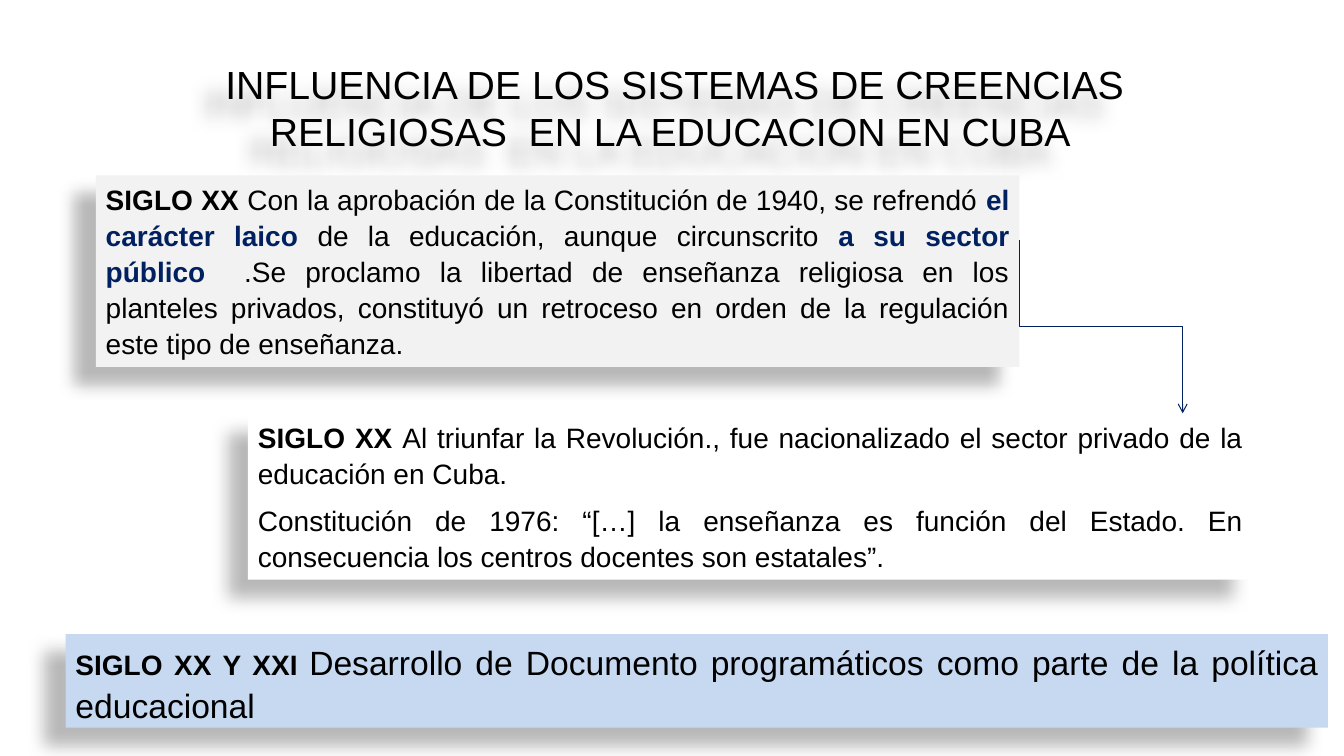
"""Build a slide on religious belief systems and education in Cuba."""
from dataclasses import dataclass

from lxml.etree import SubElement
from pptx import Presentation
from pptx.dml.color import RGBColor as Color
from pptx.enum.shapes import MSO_CONNECTOR as Connector, MSO_SHAPE as Preset
from pptx.enum.text import MSO_ANCHOR as Anchor, MSO_AUTO_SIZE as AutoSize, PP_ALIGN as Align
from pptx.oxml.ns import qn
from pptx.util import Inches, Pt


@dataclass(frozen=True)
class Theme:
    font: str = "Arial"
    ink: Color = Color.from_string("000000")
    accent: Color = Color.from_string("002060")
    grey: Color = Color.from_string("F2F2F2")
    white: Color = Color.from_string("FFFFFF")
    blue: Color = Color.from_string("C6D9F1")
    title_size: Pt = Pt(28)
    large_size: Pt = Pt(24)
    body_size: Pt = Pt(20)


theme = Theme()
presentation = Presentation()
presentation.slide_width, presentation.slide_height = Inches(13.33), Inches(7.5)
column, row = presentation.slide_width / 100, presentation.slide_height / 100
slide = presentation.slides.add_slide(presentation.slide_layouts[5])


def cast_shadow(shape):
    shape.shadow.inherit = False
    effects = shape._element.spPr.find(qn("a:effectLst"))
    shadow = SubElement(effects, qn("a:outerShdw"), blurRad=str(Pt(11.8)), dist=str(Pt(19.7)),
                        dir=str(141 * 60000), algn="ctr", rotWithShape="0")
    color = SubElement(shadow, qn("a:srgbClr"), val=str(theme.ink))
    SubElement(color, qn("a:alpha"), val="28000")


def prepare_frame(shape):
    frame = shape.text_frame
    frame.word_wrap = True
    frame.auto_size = AutoSize.SHAPE_TO_FIT_TEXT
    frame.vertical_anchor = Anchor.TOP
    return frame


title = slide.shapes.title
title.left, title.top = int(7.13 * column), int(7.33 * row)
title.width, title.height = int(86.12 * column), int(13.87 * row)
title_frame = prepare_frame(title)
title_frame.text = "INFLUENCIA DE LOS SISTEMAS DE CREENCIAS RELIGIOSAS  EN LA EDUCACION EN CUBA "
heading = title_frame.paragraphs[0]
heading.alignment = Align.CENTER
heading.font.name, heading.font.size = theme.font, theme.title_size
heading.font.color.rgb = theme.ink
cast_shadow(title)

strong = (True, theme.ink, theme.body_size)
accent = (True, theme.accent, theme.body_size)
plain = (False, theme.ink, theme.body_size)
large = (False, theme.ink, theme.large_size)
periods = [
    ((7.13, 23.2, 68.72, 25.33), theme.grey, [[
        ("SIGLO XX ", strong),
        ("Con la aprobación de la Constitución de 1940, se refrendó ", plain),
        ("el carácter laico ", accent),
        ("de la educación, aunque circunscrito ", plain),
        ("a su sector público  ", accent),
        (".Se proclamo la libertad de enseñanza religiosa en los planteles privados, "
         "constituyó un retroceso en orden de la regulación este tipo de enseñanza.", plain)]]),
    ((4.88, 83.87, 93.92, 12.4), theme.blue, [[
        ("SIGLO XX Y XXI ", strong),
        ("Desarrollo de Documento programáticos como parte de la política educacional ", large)]]),
    ((18.45, 54.67, 74.79, 22), theme.white, [
        [("SIGLO XX ", strong),
         ("Al triunfar la Revolución., fue nacionalizado el sector privado de la "
          "educación en Cuba.", plain)],
        [("Constitución de 1976: “[…] la enseñanza es función del Estado. En consecuencia "
          "los centros docentes son estatales”.", plain)]]),
]
for (left, top, width, height), fill, paragraphs in periods:
    box = slide.shapes.add_shape(Preset.RECTANGLE, int(left * column), int(top * row),
                                 int(width * column), int(height * row))
    box.fill.solid()
    box.fill.fore_color.rgb = fill
    box.line.fill.background()
    cast_shadow(box)
    frame = prepare_frame(box)
    for index, pieces in enumerate(paragraphs):
        paragraph = frame.add_paragraph() if index else frame.paragraphs[0]
        paragraph.alignment = Align.JUSTIFY
        paragraph.line_spacing, paragraph.space_after = 1.07, Pt(8)
        paragraph.font.name = theme.font
        for text, (bold, color, size) in pieces:
            run = paragraph.add_run()
            run.text = text
            run.font.bold, run.font.size = bold, size
            run.font.color.rgb = color

start_x, start_y = 75.85 * column, 31.73 * row
end_x, end_y = 88 * column, 54.67 * row
middle_x, middle_y = (start_x + end_x) / 2, (start_y + end_y) / 2
half_width, half_height = (end_y - start_y) / 2, (end_x - start_x) / 2
arrow = slide.shapes.add_connector(
    Connector.ELBOW, int(middle_x - half_width), int(middle_y - half_height),
    int(middle_x + half_width), int(middle_y + half_height))
arrow.line.color.rgb = theme.accent
arrow.line.width = Pt(0.75)
properties = arrow._element.spPr
transform = properties.find(qn("a:xfrm"))
transform.set("rot", str(270 * 60000))
transform.set("flipH", "1")
SubElement(properties.find(qn("a:ln")), qn("a:tailEnd"), type="arrow")
SubElement(properties, qn("a:effectLst"))

presentation.save("out.pptx")
